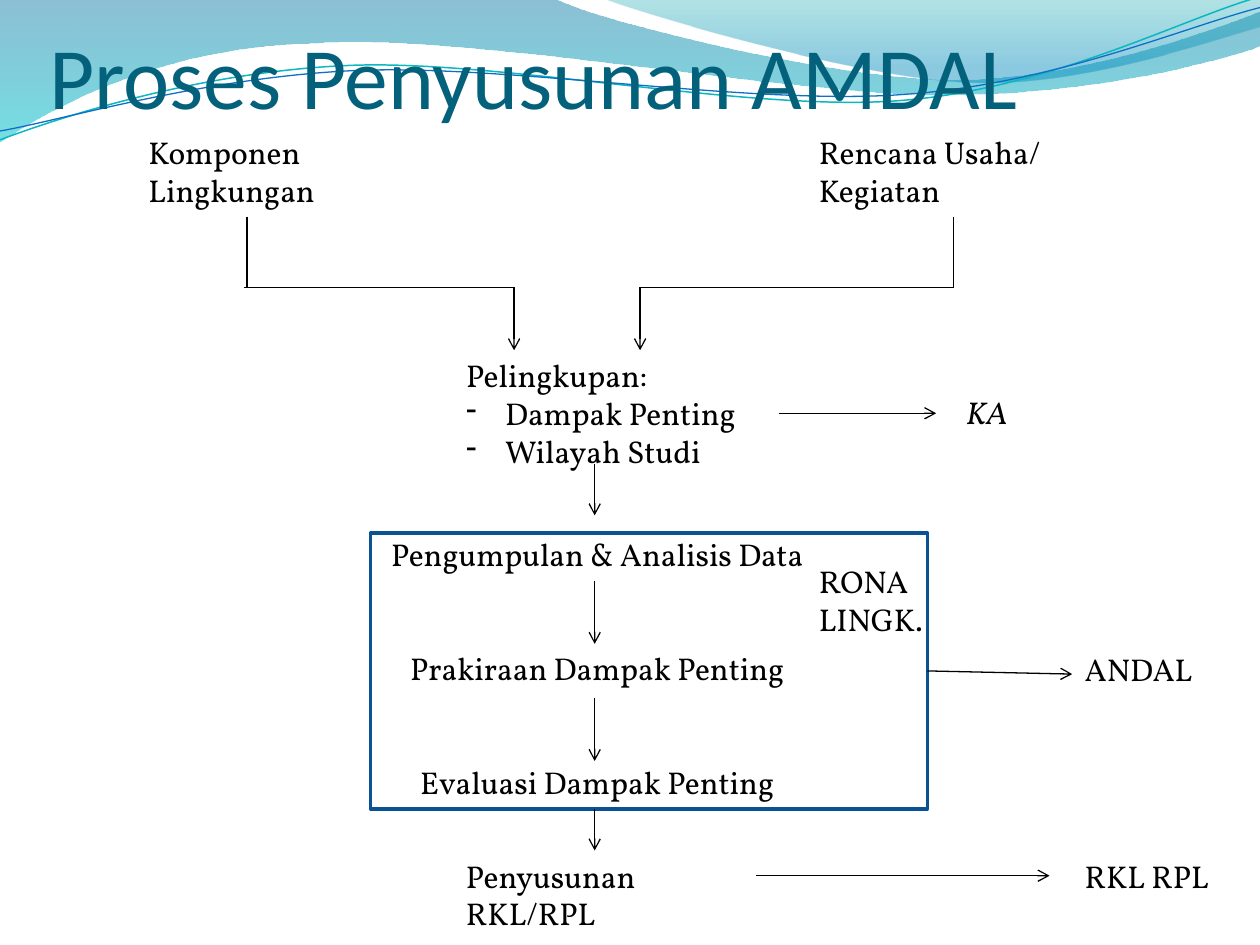
from pptx import Presentation, util as u
from pptx.dml.color import RGBColor
from pptx.enum import shapes, text
from pptx.oxml import ns, xmlchemy

COLORS = {"ink": "000000", "title": "04617B", "frame": "0B5292",
          "deep": "0074A1", "aqua": "00C6CF", "teal": "00A1A9", "sky": "008BBF",
          "cyan line": "0AB8BF", "blue line": "0F6FC6"}
BODY_FONT, BODY_SIZE = "Vollkorn", 18
STEP_GAP = 43.5  # two empty lines, in points
UNITS = 100  # outline units per inch

# Columns and rows shared by texts and arrows, in inches
COLUMN = {"environment": 1.08, "frame": 2.94, "scope": 3.6, "axis": 4.72,
          "plan": 6.4, "draft": 7.57, "output": 8.51}
ROW = {"input": 1.01, "join": 2.28, "scope": 2.78, "steps": 4.2,
       "frame": 4.23, "analysis": 5.11, "final": 6.75}

# Waves: start point, then line points (x, y) or Bezier segments (6 numbers)
WAVE_FILLS = [
    ((0, 0), [(4.4, -0.01), (4.76, 0.17, 6.64, 0.63, 7.58, 0.63),
              (8.53, 0.63, 9.58, 0.26, 10, 0.09), (10.01, 0.36),
              (9.83, 0.44, 8.7, 0.76, 7.46, 0.75), (6.22, 0.75, 3.82, 0.28, 2.57, 0.34),
              (1.29, 0.36, 0.46, 0.83, -0.01, 1.13), (0, 0)],
     [(0, "deep", 45), (1, "aqua", 55)]),
    ((4.79, -0.01), [(5.09, 0.11, 6.82, 0.62, 7.69, 0.65),
                     (8.56, 0.69, 9.61, 0.32, 10, 0.21), (10, 0), (4.79, -0.01)],
     [(0, "teal", 30), (0.8, "sky", 45)]),
]
WAVE_LINES = [
    ((0, 1.11), [(0.48, 0.93, 1.58, 0.57, 2.77, 0.52), (3.95, 0.47, 5.93, 0.89, 7.13, 0.8),
                 (8.33, 0.71, 9.38, 0.15, 9.98, -0.02)], "cyan line", 0.85),
    ((0, 1.04), [(0.47, 0.96, 1.64, 0.61, 2.83, 0.56), (4.03, 0.51, 5.97, 0.84, 7.17, 0.75),
                 (8.36, 0.67, 9.41, 0.21, 10, 0.06)], "blue line", 0.75),
]

# Name: (left, top, width, height, paragraphs)
LABELS = {
    "environment": (COLUMN["environment"], ROW["input"], 1.76, 0.71, ["Komponen Lingkungan"]),
    "plan": (COLUMN["plan"], ROW["input"], 2.34, 0.71, ["Rencana Usaha/ Kegiatan"]),
    "scope": (COLUMN["scope"], ROW["scope"], 2.58, 1,
              ["Pelingkupan:", "Dampak Penting", "Wilayah Studi"]),
    "draft": (COLUMN["draft"], 3.07, 1.52, 0.4, ["KA"]),
    "steps": (COLUMN["frame"], ROW["steps"], 3.6, 2.83,
              ["Pengumpulan & Analisis Data", "Prakiraan Dampak Penting",
               "Evaluasi Dampak Penting"]),
    "baseline": (COLUMN["plan"], 4.41, 1.03, 0.71, ["RONA LINGK."]),
    "analysis": (COLUMN["output"], ROW["analysis"], 1.24, 0.4, ["ANDAL"]),
    "management": (COLUMN["scope"], ROW["final"], 2.4, 0.4, ["Penyusunan RKL/RPL"]),
    "final": (COLUMN["output"], ROW["final"], 1.48, 0.4, ["RKL RPL"]),
}
FRAME = (COLUMN["frame"], ROW["frame"], 4.42, 2.19)
FRAME_BOTTOM = ROW["frame"] + 2.19

BOTTOM, RIGHT = 2, 3
# (source shape, side, end point, arrowhead)
JOINED_LINES = [
    ("environment", BOTTOM, (1.96, ROW["join"]), False),
    ("plan", BOTTOM, (7.57, ROW["join"]), False),
    ("scope", RIGHT, (7.43, 3.28), True),
    ("frame", RIGHT, (COLUMN["output"], 5.35), True),
    ("management", RIGHT, (8.33, 6.95), True),
]
# (start point, end point, arrowhead)
FREE_LINES = [
    ((1.94, ROW["join"]), (4.08, ROW["join"]), False),
    ((7.57, ROW["join"]), (5.08, ROW["join"]), False),
] + [((x, ROW["join"]), (x, ROW["scope"]), True) for x in (4.08, 5.08)
] + [((COLUMN["axis"], top), (COLUMN["axis"], bottom), True) for top, bottom in
     [(3.68, 4.09), (4.61, 5.11), (5.54, 6.04), (FRAME_BOTTOM, ROW["final"])]]


def color(name):
    return RGBColor.from_string(COLORS[name])


def inches(values):
    return [u.Inches(value) for value in values]


def add_child(parent, tag, **attributes):
    child = xmlchemy.OxmlElement(tag)
    for name, value in attributes.items():
        child.set(name, str(value))
    parent.append(child)
    return child


def add_wave(slide, start, segments, close):
    """Draw the outline through its anchors, then bend the curved segments."""
    anchors = [start] + [segment[-2:] for segment in segments]
    points = [(round(x * UNITS), round(y * UNITS)) for x, y in anchors]
    builder = slide.shapes.build_freeform(*points[0], scale=u.Inches(1) / UNITS)
    builder.add_line_segments(points[1:], close=close)
    shape = builder.convert_to_shape()
    shape.shadow.inherit = False

    left, top = (min(values) for values in zip(*points))
    straight_lines = list(shape._element.iter(ns.qn("a:lnTo")))
    for line, segment in zip(straight_lines, segments):
        if len(segment) == 6:
            curve = xmlchemy.OxmlElement("a:cubicBezTo")
            for x, y in zip(segment[::2], segment[1::2]):
                add_child(curve, "a:pt", x=round(x * UNITS) - left, y=round(y * UNITS) - top)
            line.getparent().replace(line, curve)
    return shape


def fill_gradient(shape, stops):
    shape.line.fill.background()
    shape.fill.gradient()
    shape.fill.gradient_angle = 270  # counter-clockwise: top to bottom
    for stop, (position, name, _) in zip(shape.fill.gradient_stops, stops):
        stop.position = position
        stop.color.rgb = color(name)
    for element, (_, _, opacity) in zip(shape._element.spPr.iter(ns.qn("a:srgbClr")), stops):
        add_child(element, "a:alpha", val=opacity * 1000)


def add_text(slide, left, top, width, height, lines, font=BODY_FONT, size=BODY_SIZE, ink="ink"):
    box = slide.shapes.add_textbox(*inches((left, top, width, height)))
    frame = box.text_frame
    frame.word_wrap = True
    frame.text = "\n".join(lines)
    for paragraph in frame.paragraphs:
        if paragraph.text in LABELS["scope"][-1][1:]:
            add_dash(paragraph)
        paragraph.font.name = font
        paragraph.font.size = u.Pt(size)
        paragraph.font.color.rgb = color(ink)
    return box


def add_dash(paragraph):
    properties = paragraph._p.get_or_add_pPr()
    properties.set("marL", str(u.Inches(0.31)))
    properties.set("indent", str(-u.Inches(0.31)))
    add_child(properties, "a:buFontTx")
    add_child(properties, "a:buChar", char="-")


def add_line(slide, start, end, arrow):
    line = slide.shapes.add_connector(shapes.MSO_CONNECTOR.STRAIGHT, *inches(start + end))
    line.line.color.rgb = color("ink")
    line.line.width = u.Pt(0.75)
    if arrow:
        add_child(line.line._get_or_add_ln(), "a:tailEnd", type="arrow")
    add_child(line._element.spPr, "a:effectLst")
    return line


def main():
    presentation = Presentation()
    presentation.slide_width, presentation.slide_height = inches((10, 7.5))
    slide = presentation.slides.add_slide(presentation.slide_layouts[6])

    for start, segments, stops in WAVE_FILLS:
        fill_gradient(add_wave(slide, start, segments, True), stops)
    for start, segments, name, width in WAVE_LINES:
        wave = add_wave(slide, start, segments, False)
        wave.fill.background()
        wave.line.color.rgb = color(name)
        wave.line.width = u.Pt(width)

    title = add_text(slide, 0.39, 0.08, 9, 0.93, ["Proses Penyusunan AMDAL"],
                     "Calibri", 50, "title").text_frame
    title.vertical_anchor = text.MSO_ANCHOR.BOTTOM
    title.margin_left = title.margin_right = title.margin_bottom = 0

    nodes = {name: add_text(slide, *label) for name, label in LABELS.items()}
    nodes["draft"].text_frame.paragraphs[0].font.italic = True
    for i, paragraph in enumerate(nodes["steps"].text_frame.paragraphs):
        paragraph.alignment = text.PP_ALIGN.CENTER
        if i:
            paragraph.space_before = u.Pt(STEP_GAP)

    frame = slide.shapes.add_shape(shapes.MSO_SHAPE.RECTANGLE, *inches(FRAME))
    frame.shadow.inherit = False
    frame.fill.background()
    frame.line.color.rgb = color("frame")
    frame.line.width = u.Pt(2)
    nodes["frame"] = frame

    for source, side, end, arrow in JOINED_LINES:
        add_line(slide, end, end, arrow).begin_connect(nodes[source], side)
    for start, end, arrow in FREE_LINES:
        add_line(slide, start, end, arrow)

    presentation.save("out.pptx")


if __name__ == "__main__":
    main()
